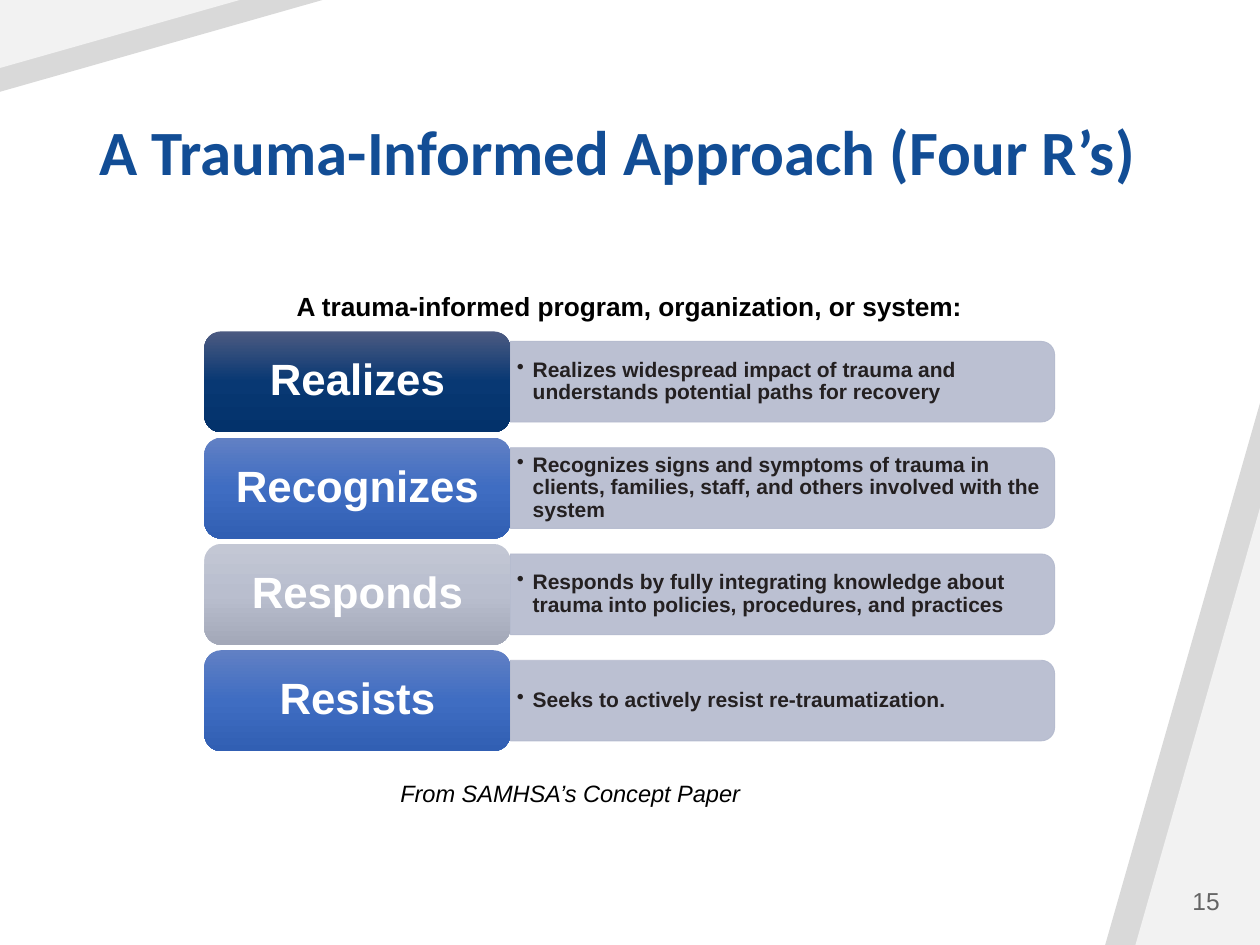
from copy import deepcopy

from lxml import etree
from pptx import Presentation
from pptx import util as u
from pptx.dml import color
from pptx.enum import shapes, text
from pptx.oxml import ns

COLORS = {
    "title": "124D95",
    "black": "000000",
    "white": "FFFFFF",
    "detail": "242021",
    "panel": "B4BACE",
    "page": "646464",
    "band": "D9D9D9",
    "corner": "F2F2F2",
}
GRADIENTS = {
    "navy": ("4C5A81", "083873", "03326B"),
    "blue": ("6180C4", "3F6DC2", "315FB3"),
    "grey": ("C3C7D4", "B9BECE", "A3A8B8"),
}
FONTS = {
    "title": {"name": "Calibri", "size": u.Pt(36), "bold": True},
    "heading": {"name": "Arial", "size": u.Pt(15), "bold": True},
    "key": {"name": "Arial", "size": u.Pt(25), "bold": True},
    "detail": {"name": "Arial", "size": u.Pt(12), "bold": True},
    "credit": {"name": "Arial", "size": u.Pt(13.5), "italic": True},
    "page": {"name": "Arial", "size": u.Pt(14)},
}
FOUR_RS = [
    ("Realizes", "navy",
     "Realizes widespread impact of trauma and understands potential paths for recovery"),
    ("Recognizes", "blue",
     "Recognizes signs and symptoms of trauma in clients, families, staff, "
     "and others involved with the system"),
    ("Responds", "grey",
     "Responds by fully integrating knowledge about trauma into policies, "
     "procedures, and practices"),
    ("Resists", "blue", "Seeks to actively resist re-traumatization."),
]
LEFT, CENTER, RIGHT = text.PP_ALIGN.LEFT, text.PP_ALIGN.CENTER, text.PP_ALIGN.RIGHT
TOP, MIDDLE, BOTTOM = (text.MSO_ANCHOR.TOP, text.MSO_ANCHOR.MIDDLE,
                       text.MSO_ANCHOR.BOTTOM)


def rgb(hex_value):
    return color.RGBColor.from_string(hex_value)


def cm(*lengths):
    return [u.Cm(length) for length in lengths]


def apply(target, values):
    for name, value in values.items():
        setattr(target, name, value)


def write(shape, wording, font, ink, align=LEFT, anchor=TOP, spacing=None, bullet=False):
    frame = shape.text_frame
    apply(frame, {"word_wrap": True, "auto_size": text.MSO_AUTO_SIZE.NONE,
                  "vertical_anchor": anchor})
    paragraph = frame.paragraphs[0]
    paragraph.text = wording
    apply(paragraph, {"alignment": align, "line_spacing": spacing})
    if bullet:
        properties = paragraph._p.get_or_add_pPr()
        properties.set("marL", str(u.Cm(0.32)))
        properties.set("indent", str(u.Cm(-0.32)))
        etree.SubElement(properties, ns.qn("a:buChar"), char="•")
    run_font = paragraph.runs[0].font
    apply(run_font, FONTS[font])
    run_font.color.rgb = rgb(COLORS[ink])


def add_plain(slide, kind, box, fill=None):
    shape = slide.shapes.add_shape(kind, *cm(*box))
    shape.shadow.inherit = False
    shape.line.fill.background()
    if fill:
        shape.fill.solid()
        shape.fill.fore_color.rgb = rgb(COLORS[fill])
    return shape


def add_corner(slide, box, inner, rotation):
    for part, fill in ((box, "band"), (inner, "corner")):
        wedge = add_plain(slide, shapes.MSO_SHAPE.ISOSCELES_TRIANGLE, part, fill)
        wedge.adjustments[0] = 1
        wedge.rotation = rotation


def add_title(slide, box, wording):
    title = slide.shapes.title
    apply(title, dict(zip(("left", "top", "width", "height"), cm(*box))))
    write(title, wording, "title", "title", anchor=BOTTOM, spacing=0.9)


def add_label(slide, box, *args, **kwargs):
    label = slide.shapes.add_textbox(*cm(*box))
    write(label, *args, **kwargs)
    return label


def add_panel(slide, box, detail):
    left, top, width, height = box
    turned = (left + (width - height) / 2, top + (height - width) / 2, height, width)
    panel = add_plain(slide, shapes.MSO_SHAPE.ROUND_2_SAME_RECTANGLE, turned, "panel")
    panel.rotation = 90
    panel.line.color.rgb = rgb(COLORS["panel"])
    panel.line.width = u.Pt(0.5)
    for tint in panel._element.spPr.iter(ns.qn("a:srgbClr")):
        etree.SubElement(tint, ns.qn("a:alpha"), val="90000")
    label = add_label(slide, (left, top + 0.08, width - 0.08, height - 0.16), detail,
                      "detail", "detail", anchor=MIDDLE, spacing=0.9, bullet=True)
    inset_x, inset_y = cm(0.13, 0.07)
    apply(label.text_frame, {"margin_left": inset_x, "margin_right": inset_x,
                             "margin_top": inset_y, "margin_bottom": inset_y})


def add_key(slide, box, wording, gradient):
    key = add_plain(slide, shapes.MSO_SHAPE.ROUNDED_RECTANGLE, box)
    key.fill.gradient()
    key.fill.gradient_angle = 270
    stop_list = key._element.spPr.find(".//" + ns.qn("a:gsLst"))
    stop_list.insert(1, deepcopy(stop_list[0]))
    for index, stop in enumerate(key.fill.gradient_stops):
        stop.color.rgb = rgb(GRADIENTS[gradient][index])
        stop.position = index / 2
    write(key, wording, "key", "white", CENTER, MIDDLE, 0.9)


def add_four_rs(slide, box):
    left, top, width, height = box
    gap = 0.11
    key_width = width * 0.36
    key_height = (height - gap * (len(FOUR_RS) - 1)) / len(FOUR_RS)
    panel_height = key_height * 0.8
    for index, (wording, gradient, detail) in enumerate(FOUR_RS):
        row_top = top + index * (key_height + gap)
        add_panel(slide, (left + key_width, row_top + (key_height - panel_height) / 2,
                          width - key_width, panel_height), detail)
        add_key(slide, (left, row_top, key_width, key_height), wording, gradient)


def main():
    deck = Presentation()
    deck.slide_width, deck.slide_height = cm(25.4, 19.05)
    slide = deck.slides.add_slide(deck.slide_layouts[5])

    add_corner(slide, (22.28, 8.13, 3.12, 10.92), (22.89, 10.24, 2.51, 8.81), 0)
    add_corner(slide, (0, 0, 6.5, 1.85), (0, 0, 4.83, 1.37), 180)
    add_title(slide, (1.75, 1.02, 22.1, 2.92), "A Trauma-Informed Approach (Four R’s)")
    add_four_rs(slide, (4.12, 6.68, 17.14, 8.46))
    add_label(slide, (4.12, 5.72, 17.14, 1.47),
              "A trauma-informed program, organization, or system:",
              "heading", "black", CENTER)
    add_label(slide, (7.82, 15.57, 8.1, 1.42), "From SAMHSA’s Concept Paper",
              "credit", "black")
    add_label(slide, (22.76, 17.65, 2.08, 1.02), "15", "page", "page", RIGHT, MIDDLE)
    deck.save("out.pptx")


if __name__ == "__main__":
    main()
